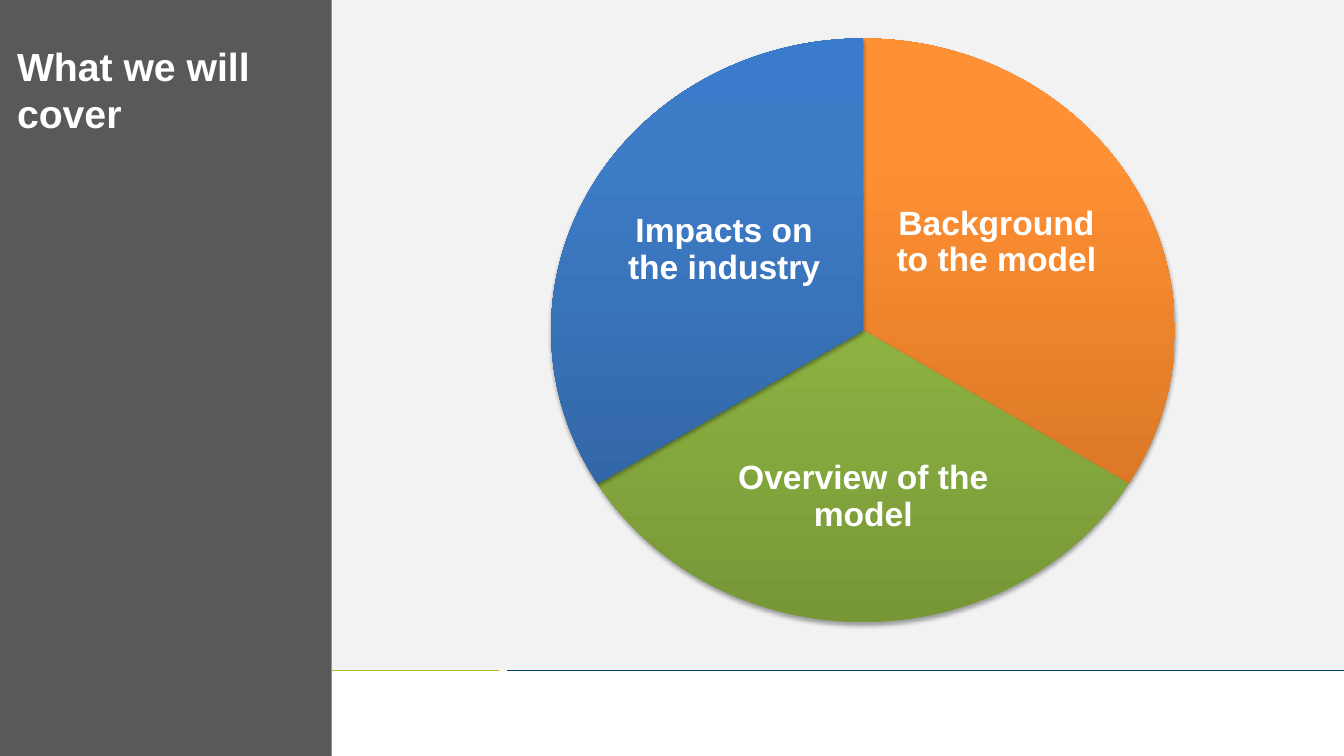
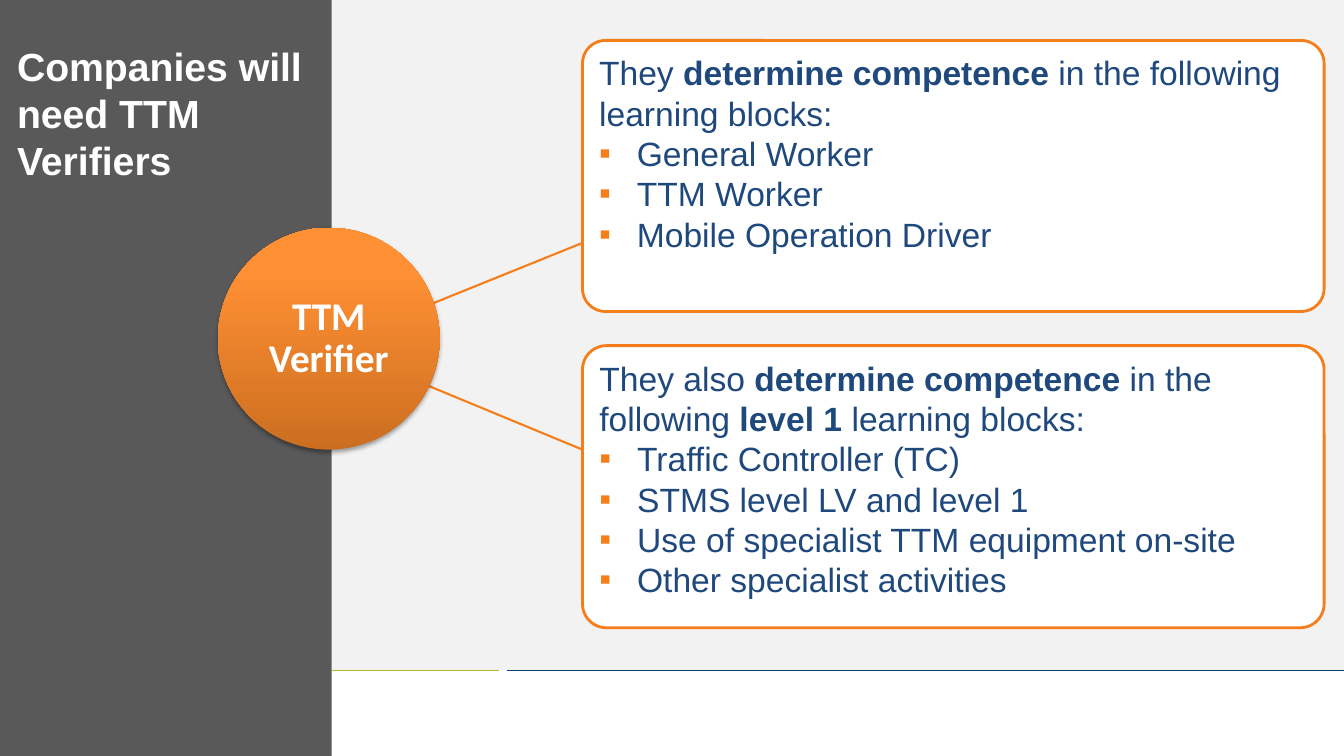
from copy import deepcopy

from lxml import etree
from pptx import Presentation
from pptx.dml.color import RGBColor
from pptx.enum.shapes import MSO_CONNECTOR, MSO_SHAPE
from pptx.enum.text import MSO_ANCHOR, PP_ALIGN
from pptx.oxml.ns import qn
from pptx.util import Cm, Pt

RECTANGLE, ROUNDED = MSO_SHAPE.RECTANGLE, MSO_SHAPE.ROUNDED_RECTANGLE
OVAL, PIE = MSO_SHAPE.OVAL, MSO_SHAPE.PIE
STRAIGHT = MSO_CONNECTOR.STRAIGHT
TOP, MIDDLE = MSO_ANCHOR.TOP, MSO_ANCHOR.MIDDLE
LEFT, CENTER = PP_ALIGN.LEFT, PP_ALIGN.CENTER

COLORS = {
    "white": "FFFFFF", "panel": "F2F2F2", "sidebar": "595959",
    "lime": "AFBD21", "petrol": "00456A", "orange": "F57E1B", "navy": "1F497D",
}
GRADIENTS = {
    "orange": ("CC6E20", "FF9034", "FF9136"),
    "green": ("779737", "9BC348", "9DC746"),
    "blue": ("2F5F99", "3D7CC7", "3A7CCB"),
}
GRADIENT_POSITIONS = (0, 0.8, 1)
SLIDE_WIDTH, SLIDE_HEIGHT = 33.87, 19.05
SIDEBAR_WIDTH, PANEL_HEIGHT = 8.36, 16.89

PIE_BOX = (13.89, 0.97, 15.72, 14.71)
SLICES = (
    ("Background to the model", "orange", 270, 30, (8.64, 2.79, 5.16, 4.72)),
    ("Overview of the model", "green", 30, 150, (4.4, 9.37, 6.93, 4.37)),
    ("Impacts on the industry", "blue", 150, 270, (1.78, 2.97, 5.16, 4.72)),
)
VERIFIER_BOX = (5.49, 5.74, 5.59, 5.59)
LINKS = ((10.72, 7.72, 14.68, 6.12), (10.74, 9.7, 14.68, 11.33))
CARDS = (
    ((14.68, 8.71, 18.69, 7.11),
     (("They also ", False), ("determine competence ", True), ("in the following ", False),
      ("level 1 ", True), ("learning blocks:", False)),
     ("Traffic Controller (TC)", "STMS level LV and level 1",
      "Use of specialist TTM equipment on-site", "Other specialist activities")),
    ((14.68, 1.02, 18.69, 6.83),
     (("They ", False), ("determine competence ", True),
      ("in the following learning blocks:", False)),
     ("General Worker", "TTM Worker", "Mobile Operation Driver")),
)


def rgb(name):
    return RGBColor.from_string(COLORS[name])


def lengths(values):
    return [Cm(value) for value in values]


def add_panel(slide, preset, box, fill=None, line=None):
    panel = slide.shapes.add_shape(preset, *lengths(box))
    panel.shadow.inherit = False
    if fill:
        panel.fill.solid()
        panel.fill.fore_color.rgb = rgb(fill)
    if line:
        panel.line.color.rgb = rgb(line)
        panel.line.width = Pt(2)
    else:
        panel.line.fill.background()
    return panel


def add_glossy(slide, preset, box, gradient):
    glossy = add_panel(slide, preset, box)
    glossy.fill.gradient()
    glossy.fill.gradient_angle = 90
    properties = glossy._element.spPr
    stops = properties.find(qn("a:gradFill")).find(qn("a:gsLst"))
    stops.append(deepcopy(stops[-1]))
    for stop, color, position in zip(
            glossy.fill.gradient_stops, GRADIENTS[gradient], GRADIENT_POSITIONS):
        stop.color.rgb = RGBColor.from_string(color)
        stop.position = position
    shadow = etree.SubElement(
        properties.find(qn("a:effectLst")), qn("a:outerShdw"),
        blurRad=str(Pt(3.1)), dist=str(Pt(1.8)), dir="5400000", rotWithShape="0")
    black = etree.SubElement(shadow, qn("a:srgbClr"), val="000000")
    etree.SubElement(black, qn("a:alpha"), val="35000")
    return glossy


def add_line(slide, ends, color, width):
    line = slide.shapes.add_connector(STRAIGHT, *lengths(ends))
    line.line.color.rgb = rgb(color)
    line.line.width = Pt(width)
    etree.SubElement(line._element.spPr, qn("a:effectLst"))


def style_run(run, size, color, bold, font="Arial"):
    run.font.name = font
    run.font.size = Pt(size)
    run.font.bold = bold
    run.font.color.rgb = rgb(color)


def add_text(slide, box, text, size, font="Arial", anchor=MIDDLE, align=CENTER,
             spacing=0.9, margins=(0, 0)):
    frame = slide.shapes.add_textbox(*lengths(box)).text_frame
    frame.word_wrap = True
    frame.vertical_anchor = anchor
    frame.margin_left = frame.margin_right = Cm(margins[0])
    frame.margin_top = frame.margin_bottom = Cm(margins[1])
    frame.text = text
    paragraph = frame.paragraphs[0]
    paragraph.alignment = align
    paragraph.line_spacing = spacing
    style_run(paragraph.runs[0], size, "white", True, font)


def add_bullet(paragraph):
    properties = paragraph._p.get_or_add_pPr()
    properties.set("marL", str(Cm(0.95)))
    properties.set("indent", str(-Cm(0.95)))
    color = etree.SubElement(properties, qn("a:buClr"))
    etree.SubElement(color, qn("a:srgbClr"), val=COLORS["orange"])
    etree.SubElement(properties, qn("a:buFont"), typeface="Arial")
    etree.SubElement(properties, qn("a:buChar"), char="▪")


def add_frame(presentation, title):
    slide = presentation.slides.add_slide(presentation.slide_layouts[6])
    add_panel(slide, RECTANGLE,
              (SIDEBAR_WIDTH, 0, SLIDE_WIDTH - SIDEBAR_WIDTH, PANEL_HEIGHT), "panel")
    add_panel(slide, RECTANGLE, (0, 0, SIDEBAR_WIDTH, SLIDE_HEIGHT), "sidebar")
    for start, end, color in ((SIDEBAR_WIDTH, 12.57, "lime"), (12.78, SLIDE_WIDTH, "petrol")):
        add_line(slide, (start, PANEL_HEIGHT, end, PANEL_HEIGHT), color, 0.75)
    add_text(slide, (0.18, 0.94, 8.03, 16.03), title, 28, anchor=TOP, align=LEFT,
             spacing=1, margins=(0.25, 0.13))
    return slide


def add_topic_pie(slide, box):
    left, top = box[:2]
    for _, gradient, start, end, _ in SLICES:
        topic = add_glossy(slide, PIE, box, gradient)
        topic.adjustments[0] = start * 0.6
        topic.adjustments[1] = end * 0.6
    for label, _, _, _, (x, y, width, height) in SLICES:
        add_text(slide, (left + x, top + y, width, height), label, 24)


def add_verifier(slide, box):
    left, top, width, height = box
    add_glossy(slide, OVAL, box, "orange")
    add_text(slide, (left + 0.81, top + 0.81, width - 1.62, height - 1.62),
             "TTM Verifier", 28, "Calibri")


def add_card(slide, box, intro, blocks):
    card = add_panel(slide, ROUNDED, box, "white", "orange")
    card.adjustments[0] = 0.085
    frame = card.text_frame
    frame.word_wrap = True
    frame.vertical_anchor = TOP
    opening = frame.paragraphs[0]
    opening.alignment = LEFT
    for text, bold in intro:
        run = opening.add_run()
        run.text = text
        style_run(run, 24, "navy", bold)
    for block in blocks:
        paragraph = frame.add_paragraph()
        paragraph.text = block
        paragraph.alignment = LEFT
        add_bullet(paragraph)
        style_run(paragraph.runs[0], 24, "navy", False)


def main():
    presentation = Presentation()
    presentation.slide_width = Cm(SLIDE_WIDTH)
    presentation.slide_height = Cm(SLIDE_HEIGHT)

    overview = add_frame(presentation, "What we will cover")
    add_topic_pie(overview, PIE_BOX)

    verifiers = add_frame(presentation, "Companies will need TTM Verifiers")
    for ends in LINKS:
        add_line(verifiers, ends, "orange", 1.5)
    add_verifier(verifiers, VERIFIER_BOX)
    for box, intro, blocks in CARDS:
        add_card(verifiers, box, intro, blocks)

    presentation.save("out.pptx")


if __name__ == "__main__":
    main()
